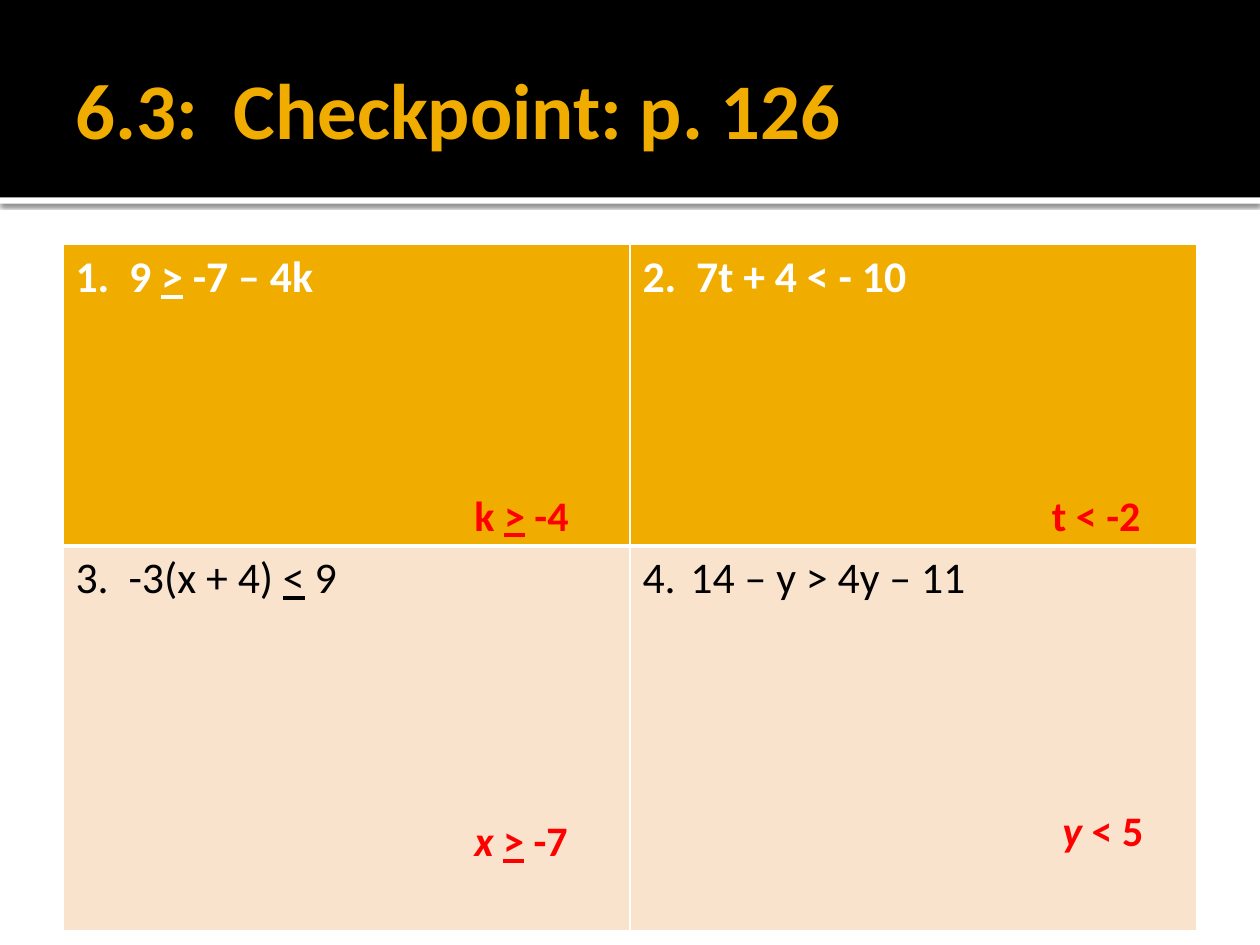
"""Build a checkpoint slide: four inequalities in a table, with their answers."""
from dataclasses import dataclass

from lxml import etree
from pptx import Presentation, util as u
from pptx.dml.color import RGBColor
from pptx.enum import shapes, text
from pptx.oxml import parse_xml
from pptx.oxml.ns import nsdecls, qn


@dataclass(frozen=True)
class Theme:
    """Colours, font and type sizes of the slide."""
    font: str = "Calibri"
    gold: str = "F0AD00"
    cream: str = "F9E3CC"
    black: str = "000000"
    white: str = "FFFFFF"
    red: str = "FF0000"
    title: int = 45
    problem: int = 25
    answer: int = 24


def write(p, content, font, size, color, bold=False, italic=False, underline=False):
    """Add one formatted run to a paragraph."""
    r = p.add_run()
    r.text = content
    f = r.font
    f.name, f.size, f.color.rgb = font, u.Pt(size), RGBColor.from_string(color)
    f.bold, f.italic, f.underline = bold, italic, underline


class Deck:
    """Holds the theme and current slide, placing elements on a 120 by 90 grid."""
    COLS, ROWS = 120, 90

    def __init__(self, prs, theme):
        """Start a title-only slide."""
        self.prs, self.theme = prs, theme
        self.s = prs.slides.add_slide(prs.slide_layouts[5])

    def box(self, col, row, cols, rows):
        """Turn grid units into left, top, width and height."""
        w, h = self.prs.slide_width / self.COLS, self.prs.slide_height / self.ROWS
        return [u.Emu(round(n)) for n in (col * w, row * h, cols * w, rows * h)]

    def write_runs(self, p, runs, **fmt):
        """Write (text, format) pairs that share a base format."""
        for content, extra in runs:
            write(p, content, **{"font": self.theme.font, **fmt, **extra})

    def title(self, content, *place):
        """Fill and move the title placeholder."""
        sp = self.s.shapes.title
        sp.left, sp.top, sp.width, sp.height = self.box(*place)
        tf = sp.text_frame
        tf.auto_size = text.MSO_AUTO_SIZE.NONE
        tf.vertical_anchor = text.MSO_ANCHOR.MIDDLE
        tf.margin_right = u.Inches(0.05)
        p = tf.paragraphs[0]
        p.alignment = text.PP_ALIGN.LEFT
        self.write_runs(p, [(content, {})], size=self.theme.title,
                        color=self.theme.gold, bold=True)

    def band(self, color, *place, shadow=False):
        """Draw a plain band behind the title."""
        sp = self.s.shapes.add_shape(shapes.MSO_SHAPE.RECTANGLE, *self.box(*place))
        sp.fill.solid()
        sp.fill.fore_color.rgb = RGBColor.from_string(color)
        sp.line.fill.background()
        sp.shadow.inherit = False
        if shadow:
            effects = sp.element.spPr.find(qn("a:effectLst"))
            effects.append(parse_xml(
                f'<a:outerShdw {nsdecls("a")} blurRad="{u.Pt(2.5)}" dist="{u.Pt(0.8)}" '
                f'dir="5400000" rotWithShape="0"><a:srgbClr val="{self.theme.black}">'
                '<a:alpha val="60000"/></a:srgbClr></a:outerShdw>'))
        self.s.shapes.title.element.addprevious(sp.element)

    def table(self, problems, styles, heights, *place):
        """Draw the grid of problems, one style per row."""
        frame = self.s.shapes.add_table(len(problems), len(problems[0]), *self.box(*place))
        tbl = frame.table
        tbl.horz_banding = False
        for i, (line, style, height) in enumerate(zip(problems, styles, heights)):
            tbl.rows[i].height = self.box(0, 0, 0, height)[3]
            for j, runs in enumerate(line):
                cell = tbl.cell(i, j)
                cell.fill.solid()
                cell.fill.fore_color.rgb = RGBColor.from_string(style["fill"])
                self.borders(cell, top=3 if i else 1, bottom=1 if i else 3)
                self.write_runs(cell.text_frame.paragraphs[0], runs,
                                size=self.theme.problem, **style["fmt"])
        return tbl

    def borders(self, cell, top, bottom):
        """Give a cell white borders."""
        tc_pr = cell._tc.get_or_add_tcPr()
        for i, (side, width) in enumerate(zip("LRTB", (1, 1, top, bottom))):
            tc_pr.insert(i, parse_xml(
                f'<a:ln{side} {nsdecls("a")} w="{u.Pt(width)}"><a:solidFill>'
                f'<a:srgbClr val="{self.theme.white}"/></a:solidFill></a:ln{side}>'))

    def number(self, cell, start):
        """Number a cell's paragraph automatically."""
        p_pr = cell.text_frame.paragraphs[0]._p.get_or_add_pPr()
        indent = u.Inches(0.38)
        p_pr.set("marL", str(indent))
        p_pr.set("indent", str(-indent))
        etree.SubElement(p_pr, qn("a:buAutoNum"), type="arabicPeriod", startAt=str(start))

    def answer(self, runs, *place):
        """Place an answer in red."""
        tf = self.s.shapes.add_textbox(*self.box(*place)).text_frame
        tf.word_wrap = True
        tf.auto_size = text.MSO_AUTO_SIZE.SHAPE_TO_FIT_TEXT
        self.write_runs(tf.paragraphs[0], runs, size=self.theme.answer,
                        color=self.theme.red, bold=True)


def main():
    """Compose and save the slide."""
    prs, th = Presentation(), Theme()
    prs.slide_width, prs.slide_height = u.Inches(10), u.Inches(7.5)
    deck = Deck(prs, th)
    under, italic = {"underline": True}, {"italic": True}

    deck.band(th.white, 0, 18.8, 120, 0.6, shadow=True)
    deck.band(th.black, 0, 0, 120, 18.8)
    deck.title("6.3:  Checkpoint: p. 126", 6, 2, 108, 16.5)

    problems = [
        [[("1.  9 ", {}), (">", under), (" -7 – 4k", {})], [("2.  7t + 4 < - 10", {})]],
        [[("3.  -3(x + 4) ", {}), ("<", under), (" 9", {})], [("14 – y > 4y – 11", {})]],
    ]
    styles = [{"fill": th.gold, "fmt": {"color": th.white, "bold": True}},
              {"fill": th.cream, "fmt": {"color": th.black}}]
    tbl = deck.table(problems, styles, (28.7, 36.6), 6, 23.3, 108, 65.3)
    deck.number(tbl.cell(1, 1), 4)

    deck.answer([("k ", {}), (">", under), (" -4", {})], 44, 46, 17, 6)
    deck.answer([("t < -2", {})], 99, 46, 14, 6)
    deck.answer([("x ", italic), (">", under), (" -7", {})], 44, 77, 14, 6)
    deck.answer([("y ", italic), ("< 5", {})], 100, 76, 11, 6)
    prs.save("out.pptx")


if __name__ == "__main__":
    main()
